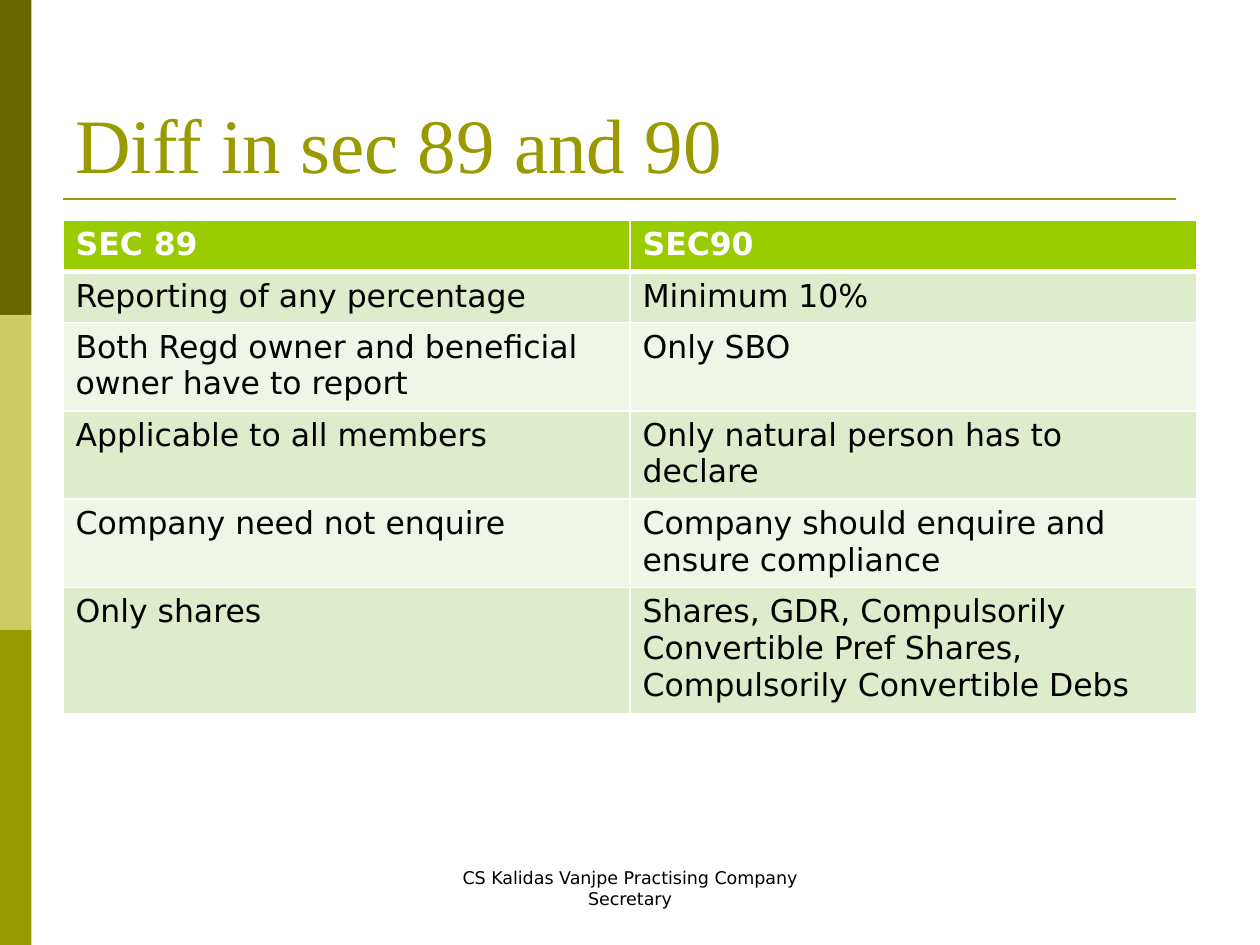
from lxml.etree import SubElement
from pptx import Presentation
from pptx.dml.color import RGBColor
from pptx.enum.shapes import MSO_CONNECTOR, MSO_SHAPE
from pptx.enum.text import MSO_ANCHOR, PP_ALIGN
from pptx.oxml import parse_xml
from pptx.oxml.ns import nsdecls, qn
from pptx.util import Pt

TITLE = "Diff in sec 89 and 90"
FOOTER = "CS Kalidas Vanjpe Practising Company Secretary"
ROWS = [
    ("SEC 89", "SEC90"),
    ("Reporting of any percentage", "Minimum 10%"),
    ("Both Regd owner and beneficial owner have to report", "Only SBO"),
    ("Applicable to all members", "Only natural person has to declare"),
    ("Company need not enquire", "Company should enquire and ensure compliance"),
    ("Only shares",
     "Shares, GDR, Compulsorily Convertible Pref Shares, Compulsorily Convertible Debs"),
]
SIDEBAR = ["666600", "CCCC66", "999900"]
OLIVE, HEADER, BANDS = "999900", "99CC00", ["EFF6E7", "DEECCC"]
BLACK, WHITE = "000000", "FFFFFF"
SERIF, SANS = "Times New Roman", "DejaVu Sans"
WIDTH, HEIGHT = 720, 540
LEFT, TABLE_WIDTH, ROW_HEIGHT = 36, 648, 29.2


def color(value):
    return RGBColor.from_string(value)


def write(frame, text, font_name, size, text_color, bold=False, align=PP_ALIGN.LEFT):
    frame.word_wrap = True
    para = frame.paragraphs[0]
    para.text = text
    para.alignment = align
    para.font.name = font_name
    para.font.size = Pt(size)
    para.font.bold = bold
    para.font.color.rgb = color(text_color)


def add_text(page, left, top, width, height, *style, anchor=MSO_ANCHOR.TOP, **options):
    box = page.shapes.add_textbox(Pt(left), Pt(top), Pt(width), Pt(height))
    box.text_frame.vertical_anchor = anchor
    write(box.text_frame, *style, **options)


def set_borders(cell, top, bottom):
    properties = cell._tc.get_or_add_tcPr()
    for position, (side, width) in enumerate([("L", 1), ("R", 1), ("T", top), ("B", bottom)]):
        properties.insert(position, parse_xml(
            f'<a:ln{side} {nsdecls("a")} w="{Pt(width)}"><a:solidFill>'
            f'<a:srgbClr val="{WHITE}"/></a:solidFill></a:ln{side}>'))


def add_sidebar(page):
    height = HEIGHT / len(SIDEBAR)
    for index, fill in enumerate(SIDEBAR):
        block = page.shapes.add_shape(
            MSO_SHAPE.RECTANGLE, 0, Pt(index * height), Pt(18), Pt(height))
        block.shadow.inherit = False
        block.fill.solid()
        block.fill.fore_color.rgb = color(fill)
        block.line.fill.background()


def add_rule(page):
    rule = page.shapes.add_connector(
        MSO_CONNECTOR.STRAIGHT, Pt(LEFT), Pt(113.75), Pt(672), Pt(113.75))
    rule.line.color.rgb = color(OLIVE)
    rule.line.width = Pt(1.5)
    SubElement(rule._element.spPr, qn("a:effectLst"))


def add_comparison(page):
    columns = len(ROWS[0])
    table = page.shapes.add_table(
        len(ROWS), columns, Pt(LEFT), Pt(126), Pt(TABLE_WIDTH),
        Pt(ROW_HEIGHT * len(ROWS))).table
    for column in table.columns:
        column.width = Pt(TABLE_WIDTH / columns)
    for row_index, texts in enumerate(ROWS):
        table.rows[row_index].height = Pt(ROW_HEIGHT)
        is_header = row_index == 0
        for column_index, text in enumerate(texts):
            cell = table.cell(row_index, column_index)
            cell.fill.solid()
            cell.fill.fore_color.rgb = color(HEADER if is_header else BANDS[row_index % 2])
            set_borders(cell, 3 if row_index == 1 else 1, 3 if is_header else 1)
            write(cell.text_frame, text, SANS, 18, WHITE if is_header else BLACK,
                  bold=is_header)


def main():
    deck = Presentation()
    deck.slide_width, deck.slide_height = Pt(WIDTH), Pt(HEIGHT)
    page = deck.slides.add_slide(deck.slide_layouts[6])
    add_sidebar(page)
    add_rule(page)
    add_text(page, LEFT, 21.6, TABLE_WIDTH, 90, TITLE, SERIF, 44, OLIVE,
             anchor=MSO_ANCHOR.BOTTOM)
    add_comparison(page)
    add_text(page, 246, 492, 228, 36, FOOTER, SANS, 10, BLACK, align=PP_ALIGN.CENTER)
    deck.save("out.pptx")


if __name__ == "__main__":
    main()
